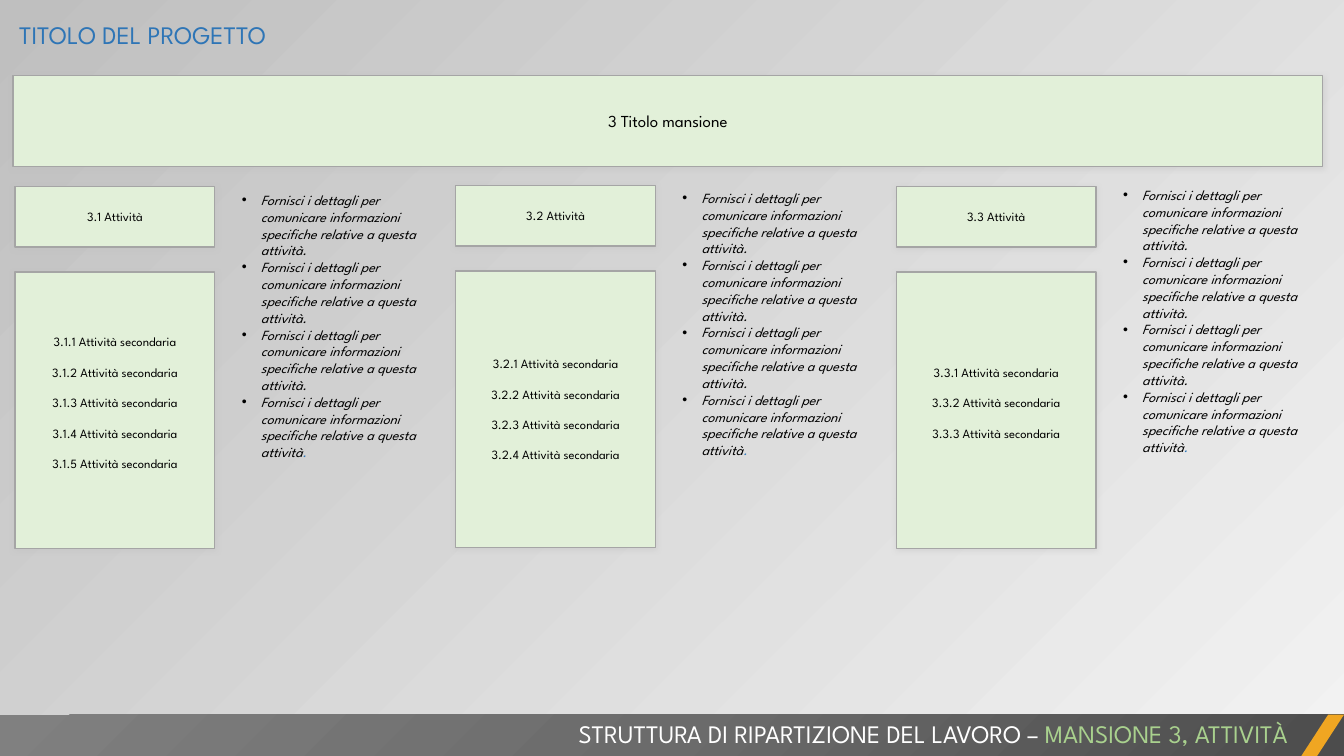
from dataclasses import dataclass

from lxml import etree
from pptx import Presentation
from pptx.dml.color import RGBColor
from pptx.enum.shapes import MSO_SHAPE as SHAPE
from pptx.enum.text import MSO_ANCHOR as ANCHOR, MSO_AUTO_SIZE as AUTO, PP_ALIGN as ALIGN
from pptx.oxml import parse_xml
from pptx.oxml.ns import nsdecls, qn
from pptx.util import Inches, Pt


@dataclass(frozen=True)
class Theme:
    font: str = "League Spartan"
    ink: str = "000000"
    white: str = "FFFFFF"
    blue: str = "2E75B6"
    light_green: str = "A9D18E"
    box_fill: str = "E2F0D9"
    box_line: str = "A5A5A5"
    shadow: str = "BFBFBF"
    accent: str = "F0A622"
    heading: int = 18
    task: int = 12
    note: int = 10
    activity: int = 9


THEME = Theme()
BACKGROUND_STOPS = [(0, "F2F2F2", 40), (100, "BFBFBF", 100)]
BAR_STOPS = [(0, "4C4C4C", 100), (50, "6B6B6B", 100), (100, "808080", 100)]
LINEAR = '<a:lin ang="13500000" scaled="0"/>'
FROM_CORNER = '<a:path path="circle"><a:fillToRect l="100000" t="100000"/></a:path>'

NOTE = "Fornisci i dettagli per comunicare informazioni specifiche relative a questa attività"
NOTE_COUNT = 4
COLUMN_LEFT, COLUMN_PITCH = 0.15, 4.37
# (subtask count, box top, notes top, bottom inset of the subtask box)
COLUMNS = [(5, 1.85, 1.85, 0.2), (4, 1.84, 1.83, 0.05), (3, 1.85, 1.8, 0.2)]


def rgb(color):
    return RGBColor.from_string(color)


def add_run(p, text, size, color, italic=False):
    r = p.add_run()
    r.text = text
    r.font.name = THEME.font
    r.font.size = Pt(size)
    r.font.italic = italic
    r.font.color.rgb = rgb(color)


def next_paragraph(tf, index):
    return tf.paragraphs[0] if index == 0 else tf.add_paragraph()


def set_gradient(fill, owner, stops, direction):
    """Replace the fill inside owner by a gradient of (position, colour, opacity) stops."""
    fill.gradient()
    old = owner.find(".//" + qn("a:gradFill"))
    marks = "".join(
        f'<a:gs pos="{pos * 1000}"><a:srgbClr val="{color}">'
        f'<a:alpha val="{alpha * 1000}"/></a:srgbClr></a:gs>'
        for pos, color, alpha in stops)
    new = parse_xml(f'<a:gradFill {nsdecls("a")} rotWithShape="1">'
                    f'<a:gsLst>{marks}</a:gsLst>{direction}</a:gradFill>')
    old.getparent().replace(old, new)


def add_plain_shape(slide, kind, left, top, width, height):
    sp = slide.shapes.add_shape(kind, Inches(left), Inches(top), Inches(width), Inches(height))
    sp.shadow.inherit = False
    sp.line.fill.background()
    return sp


def add_soft_shadow(sp):
    effects = sp._element.spPr.find(qn("a:effectLst"))
    shadow = etree.SubElement(effects, qn("a:outerShdw"), blurRad=str(Pt(4)),
                              dist=str(Pt(1)), dir="5400000", rotWithShape="0")
    color = etree.SubElement(shadow, qn("a:srgbClr"), val=THEME.shadow)
    etree.SubElement(color, qn("a:alpha"), val="40000")


def add_box(slide, left, top, width, height, lines, size, bottom_inset=0.05):
    sp = add_plain_shape(slide, SHAPE.RECTANGLE, left, top, width, height)
    sp.fill.solid()
    sp.fill.fore_color.rgb = rgb(THEME.box_fill)
    sp.line.color.rgb = rgb(THEME.box_line)
    sp.line.width = Pt(1)
    add_soft_shadow(sp)
    tf = sp.text_frame
    tf.word_wrap = True
    tf.vertical_anchor = ANCHOR.MIDDLE
    tf.margin_bottom = Inches(bottom_inset)
    for i, line in enumerate(lines):
        p = next_paragraph(tf, i)
        p.alignment = ALIGN.CENTER
        if i < len(lines) - 1:
            p.space_after = Pt(10.86)
        add_run(p, line, size, THEME.ink)


def add_text_box(slide, left, top, width, height):
    sp = slide.shapes.add_textbox(Inches(left), Inches(top), Inches(width), Inches(height))
    sp.text_frame.word_wrap = True
    return sp.text_frame


def add_bullet(p):
    pPr = p._p.get_or_add_pPr()
    pPr.set("marL", str(Inches(0.19)))
    pPr.set("indent", str(Inches(-0.19)))
    etree.SubElement(pPr, qn("a:buFont"), typeface="Arial")
    etree.SubElement(pPr, qn("a:buChar"), char="•")


def add_notes(slide, left, top):
    tf = add_text_box(slide, left, top, 2.06, 3)
    for i in range(NOTE_COUNT):
        p = next_paragraph(tf, i)
        add_bullet(p)
        last = i == NOTE_COUNT - 1
        add_run(p, NOTE if last else NOTE + ".", THEME.note, THEME.ink, italic=True)
        if last:
            add_run(p, ".", THEME.note, THEME.blue, italic=True)


def add_activity_column(slide, number, left, subtasks, top, notes_top, bottom_inset):
    add_box(slide, left, top, 1.98, 0.6, [f"3.{number} Attività"], THEME.activity)
    lines = [f"3.{number}.{k} Attività secondaria" for k in range(1, subtasks + 1)]
    add_box(slide, left, top + 0.85, 1.98, 2.74, lines, THEME.activity, bottom_inset)
    add_notes(slide, left + 2.15, notes_top)


def set_title(slide, text):
    title = slide.shapes.title
    title.left, title.top = Inches(0.09), Inches(0.14)
    title.width, title.height = Inches(10.11), Inches(0.4)
    tf = title.text_frame
    tf.auto_size = AUTO.NONE
    tf.vertical_anchor = ANCHOR.TOP
    p = tf.paragraphs[0]
    p.alignment = ALIGN.LEFT
    add_run(p, text, THEME.heading, THEME.blue)


def add_footer(slide):
    bar = add_plain_shape(slide, SHAPE.RECTANGLE, 0, 7.09, 13.33, 0.41)
    set_gradient(bar.fill, bar._element.spPr, BAR_STOPS, FROM_CORNER)
    stripe = add_plain_shape(slide, SHAPE.PARALLELOGRAM, 12.9, 7.09, 0.43, 0.42)
    stripe.adjustments[0] = 0.65
    stripe.fill.solid()
    stripe.fill.fore_color.rgb = rgb(THEME.accent)
    p = add_text_box(slide, 0.57, 7.08, 12.3, 0.4).paragraphs[0]
    p.alignment = ALIGN.RIGHT
    add_run(p, "STRUTTURA DI RIPARTIZIONE DEL LAVORO – ", THEME.heading, THEME.white)
    add_run(p, "MANSIONE 3, ATTIVITÀ", THEME.heading, THEME.light_green)


def main():
    prs = Presentation()
    prs.slide_width, prs.slide_height = Inches(13.33), Inches(7.5)
    slide = prs.slides.add_slide(prs.slide_layouts.get_by_name("Title Only"))
    set_gradient(slide.background.fill, slide._element.cSld, BACKGROUND_STOPS, LINEAR)
    set_title(slide, "TITOLO DEL PROGETTO")
    add_box(slide, 0.13, 0.75, 12.99, 0.9, ["3 Titolo mansione"], THEME.task)
    for i, column in enumerate(COLUMNS):
        add_activity_column(slide, i + 1, COLUMN_LEFT + i * COLUMN_PITCH, *column)
    add_footer(slide)
    prs.save("out.pptx")


if __name__ == "__main__":
    main()
